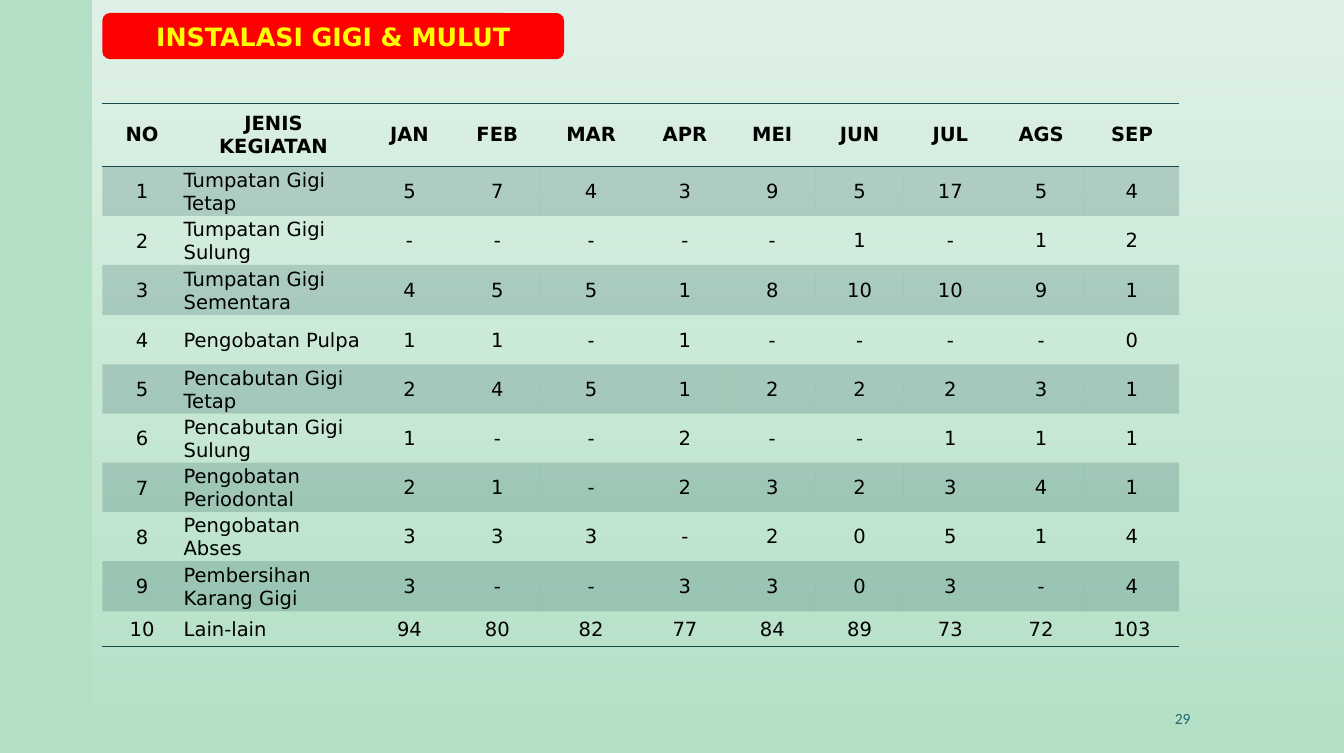
from lxml import etree
from pptx import Presentation
from pptx.dml.color import RGBColor
from pptx.enum.shapes import MSO_SHAPE as Shape
from pptx.enum.text import MSO_ANCHOR as Anchor, PP_ALIGN as Align
from pptx.oxml import parse_xml
from pptx.oxml.ns import nsdecls, qn
from pptx.util import Inches, Pt

COLORS = {
    "background": "B3E0C5", "glow": "FFFFFF", "banner": "FF0000",
    "title": "FFFF00", "ink": "000000", "rule": "164B4F", "page": "1F696F",
}
NO_STYLE = "{2D5ABB26-0587-4C30-8999-92F81FD0307C}"
COLUMN_WIDTHS = [0.79, 1.83, 0.88, 0.87, 1, 0.87, 0.87, 0.87, 0.94, 0.87, 0.94]
ROW_HEIGHTS = [0.63] + [0.49, 0.49, 0.5] + [0.49] * 5 + [0.5, 0.35]
HEADINGS = ["NO", "JENIS KEGIATAN", "JAN", "FEB", "MAR", "APR", "MEI",
            "JUN", "JUL", "AGS", "SEP"]
ACTIVITIES = [
    ("Tumpatan Gigi Tetap", "5 7 4 3 9 5 17 5 4"),
    ("Tumpatan Gigi Sulung", "- - - - - 1 - 1 2"),
    ("Tumpatan Gigi Sementara", "4 5 5 1 8 10 10 9 1"),
    ("Pengobatan Pulpa", "1 1 - 1 - - - - 0"),
    ("Pencabutan Gigi Tetap", "2 4 5 1 2 2 2 3 1"),
    ("Pencabutan Gigi Sulung", "1 - - 2 - - 1 1 1"),
    ("Pengobatan Periodontal", "2 1 - 2 3 2 3 4 1"),
    ("Pengobatan Abses", "3 3 3 - 2 0 5 1 4"),
    ("Pembersihan Karang Gigi", "3 - - 3 3 0 3 - 4"),
    ("Lain-lain", "94 80 82 77 84 89 73 72 103"),
]


def rgb(name):
    return RGBColor.from_string(COLORS[name])


def write(frame, text, size=14, color="ink", bold=False, align=Align.CENTER,
          font="DejaVu Sans"):
    frame.word_wrap = True
    paragraph = frame.paragraphs[0]
    paragraph.alignment = align
    run = paragraph.add_run()
    run.text = text
    run.font.name, run.font.size, run.font.bold = font, Pt(size), bold
    run.font.color.rgb = rgb(color)


def add_plain_shape(slide, preset, box):
    shape = slide.shapes.add_shape(preset, *map(Inches, box))
    shape.shadow.inherit = False
    shape.line.fill.background()
    return shape


def add_backdrop(slide, box):
    """Tint the slide and lay a white glow that fades downwards over the box."""
    slide.background.fill.solid()
    slide.background.fill.fore_color.rgb = rgb("background")
    glow = add_plain_shape(slide, Shape.RECTANGLE, box)
    stops = "".join(
        f'<a:gs pos="{pos}"><a:srgbClr val="{COLORS["glow"]}">'
        f'<a:alpha val="{alpha}"/></a:srgbClr></a:gs>'
        for pos, alpha in [(0, 60000), (100000, 0)])
    gradient = parse_xml(
        f'<a:gradFill {nsdecls("a")} rotWithShape="1"><a:gsLst>{stops}</a:gsLst>'
        '<a:lin ang="5400000" scaled="0"/></a:gradFill>')
    glow.element.spPr.find(qn("a:prstGeom")).addnext(gradient)


def add_title(slide, box):
    banner = add_plain_shape(slide, Shape.ROUNDED_RECTANGLE, box)
    banner.fill.solid()
    banner.fill.fore_color.rgb = rgb("banner")
    banner.text_frame.vertical_anchor = Anchor.MIDDLE
    write(banner.text_frame, "INSTALASI GIGI & MULUT", size=18.1,
          color="title", bold=True)


def add_page_number(slide, box):
    frame = slide.shapes.add_textbox(*map(Inches, box)).text_frame
    frame.vertical_anchor = Anchor.MIDDLE
    write(frame, "29", size=11.1, color="page", align=Align.RIGHT, font="Calibri")


def set_margins(cell, left, top, right, bottom):
    cell.margin_left, cell.margin_top = Inches(left), Inches(top)
    cell.margin_right, cell.margin_bottom = Inches(right), Inches(bottom)


def shade(cell, banded):
    if not banded:
        cell.fill.background()
        return
    cell.fill.solid()
    cell.fill.fore_color.rgb = rgb("rule")
    color = next(cell._tc.tcPr.iter(qn("a:srgbClr")))
    etree.SubElement(color, qn("a:alpha")).set("val", "20000")


def add_rules(cell, *sides):
    """Draw 1 pt cell borders; sides are given in the order lnT, lnB."""
    for index, side in enumerate(sides):
        cell._tc.tcPr.insert(index, parse_xml(
            f'<a:{side} {nsdecls("a")} w="12700"><a:solidFill>'
            f'<a:srgbClr val="{COLORS["rule"]}"/></a:solidFill></a:{side}>'))


def add_activity_table(slide, box):
    rows = [HEADINGS] + [[str(number), activity, *counts.split()]
                         for number, (activity, counts) in enumerate(ACTIVITIES, 1)]
    table = slide.shapes.add_table(len(rows), len(HEADINGS),
                                   *map(Inches, box)).table
    table._tbl.tblPr.find(qn("a:tableStyleId")).text = NO_STYLE
    table.first_row = table.horz_banding = False
    for column, width in zip(table.columns, COLUMN_WIDTHS):
        column.width = Inches(width)
    for row, height in zip(table.rows, ROW_HEIGHTS):
        row.height = Inches(height)

    for r, values in enumerate(rows):
        for c, value in enumerate(values):
            cell = table.cell(r, c)
            cell.vertical_anchor = Anchor.MIDDLE
            if r == 0:
                set_margins(cell, 0.2, 0.08, 0.2, 0.08)
            else:
                inset = 0.02 if c < 2 else 0.01
                set_margins(cell, inset, inset, inset, 0)
            write(cell.text_frame, value, bold=r == 0,
                  align=Align.LEFT if r and c == 1 else Align.CENTER)
            shade(cell, banded=r % 2 == 1)
            if r == 0:
                add_rules(cell, "lnT", "lnB")
            elif r == len(rows) - 1:
                add_rules(cell, "lnB")


def main():
    deck = Presentation()
    deck.slide_width, deck.slide_height = Inches(13.39), Inches(7.5)
    slide = deck.slides.add_slide(deck.slide_layouts[6])
    add_backdrop(slide, (0.92, 0, 12.47, 7.5))
    add_page_number(slide, (8.84, 6.95, 3.12, 0.4))
    add_title(slide, (1.02, 0.13, 4.6, 0.46))
    add_activity_table(slide, (1.02, 1.03, 10.72, 5.43))
    deck.save("out.pptx")


if __name__ == "__main__":
    main()
